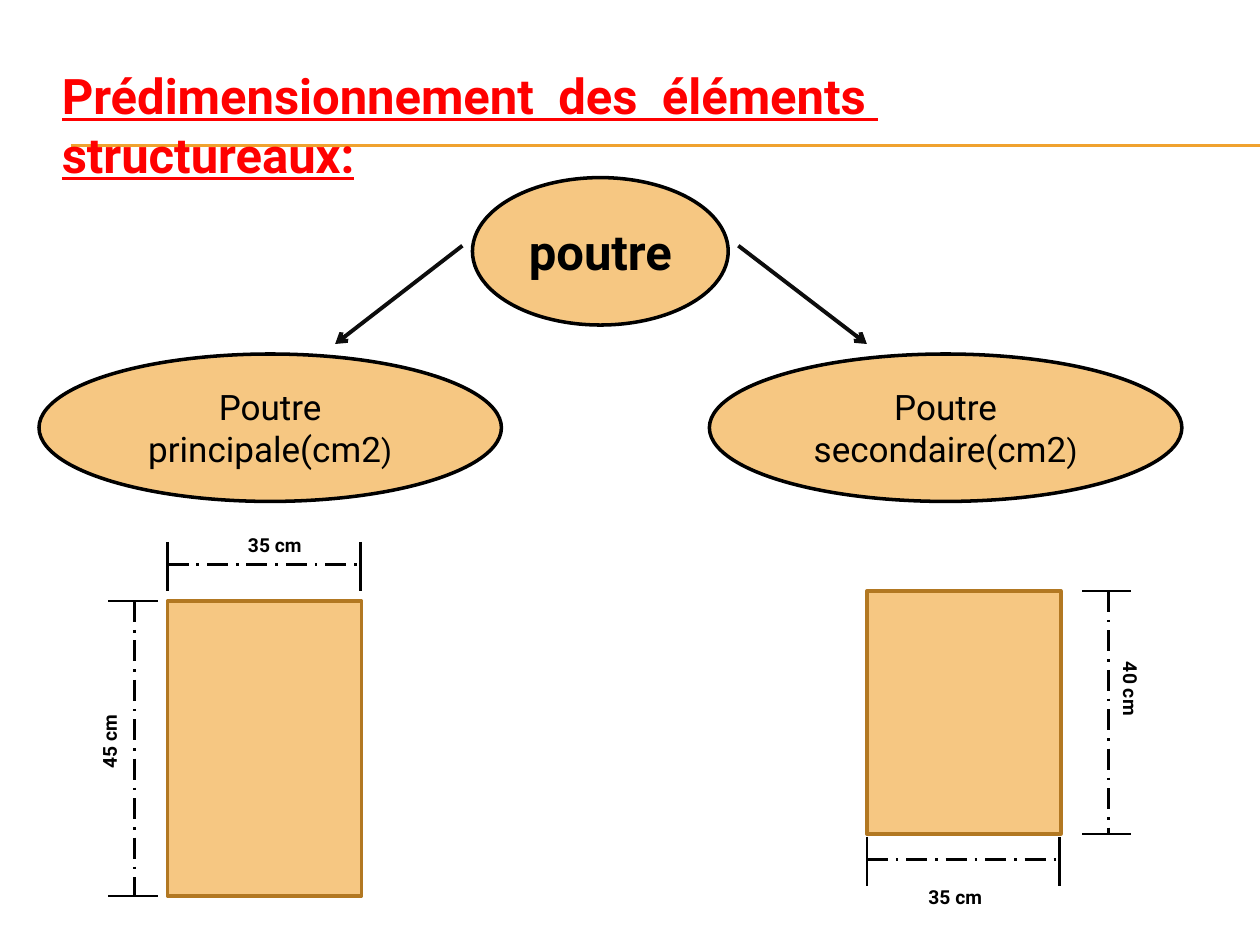
from dataclasses import dataclass

import pptx
import pptx.dml.color
import pptx.enum.dml
import pptx.enum.shapes
import pptx.enum.text
import pptx.oxml
import pptx.oxml.ns
import pptx.util
from pptx.util import Inches

COLORS = {
    "title": "FF0000",
    "rule": "F0A22E",
    "fill": "F6C782",
    "section_border": "B27822",
    "arrow": "0D0D0D",
    "ink": "000000",
}
FONT = "Roboto"
SHAPES = pptx.enum.shapes.MSO_SHAPE
ANCHORS = pptx.enum.text.MSO_ANCHOR
DASH = pptx.enum.dml.MSO_LINE.LONG_DASH_DOT
BOTTOM_TO_TOP, TOP_TO_BOTTOM = 270, 90


@dataclass(frozen=True)
class Box:
    left: float
    top: float
    width: float
    height: float

    def lengths(self) -> list:
        return [Inches(v) for v in (self.left, self.top, self.width, self.height)]


@dataclass(frozen=True)
class Beam:
    box: Box
    runs: tuple[tuple[str, int], ...]
    bold: bool = False


@dataclass(frozen=True)
class Dimension:
    """A dash-dot line at `level`, closed by ticks from `tick_start` to `tick_end`."""
    start: float
    end: float
    level: float
    tick_start: float
    tick_end: float
    vertical: bool = False


@dataclass(frozen=True)
class Label:
    text: str
    left: float
    top: float
    rotation: int = 0


BEAMS = [
    Beam(Box(3.75, 1.41, 2.03, 1.17), (("poutre", 28),), bold=True),
    Beam(Box(0.31, 2.81, 3.67, 1.17), (("Poutre principale(cm2", 20), (")", 18))),
    Beam(Box(5.63, 2.81, 3.75, 1.17), (("Poutre secondaire(cm2", 20), (")", 18))),
]
ARROWS = [((3.67, 1.95), (2.66, 2.73)), ((5.86, 1.95), (6.88, 2.73))]
MAIN_SECTION = Box(1.33, 4.77, 1.54, 2.34)
SECONDARY_SECTION = Box(6.88, 4.69, 1.54, 1.93)
DIMENSIONS = [
    Dimension(1.33, 2.86, 4.48, 4.3, 4.69),
    Dimension(4.77, 7.11, 1.07, 0.86, 1.25, vertical=True),
    Dimension(4.69, 6.62, 8.8, 8.59, 8.98, vertical=True),
    Dimension(6.88, 8.41, 6.82, 6.64, 7.03),
]
LABELS = [
    Label("35 cm", 1.87, 4.18),
    Label("35 cm", 7.27, 6.98),
    Label("45 cm", 0.52, 5.7, BOTTOM_TO_TOP),
    Label("40 cm", 8.62, 5.36, TOP_TO_BOTTOM),
]


def rgb(name: str) -> pptx.dml.color.RGBColor:
    return pptx.dml.color.RGBColor.from_string(COLORS[name])


def style_font(font, size: int, color: str, bold: bool) -> None:
    font.name = FONT
    font.size = pptx.util.Pt(size)
    font.bold = bold
    font.color.rgb = rgb(color)


def add_line(slide, start, end, color: str = "ink", width: float = 1.5, dash=None):
    line = slide.shapes.add_connector(
        pptx.enum.shapes.MSO_CONNECTOR.STRAIGHT,
        *(Inches(v) for v in (*start, *end)),
    )
    line.line.color.rgb = rgb(color)
    line.line.width = pptx.util.Pt(width)
    if dash is not None:
        line.line.dash_style = dash
    pptx.oxml.ns.qn("a:effectLst")
    line.element.spPr.append(pptx.oxml.parse_xml(
        f'<a:effectLst {pptx.oxml.ns.nsdecls("a")}/>'))
    return line


def add_arrow(slide, start, end) -> None:
    arrow = add_line(slide, start, end, "arrow", 2.25)
    arrow.line._get_or_add_ln().append(pptx.oxml.parse_xml(
        f'<a:tailEnd {pptx.oxml.ns.nsdecls("a")} type="arrow"/>'))


def add_filled_shape(slide, kind, box: Box, border: str):
    shape = slide.shapes.add_shape(kind, *box.lengths())
    shape.shadow.inherit = False
    shape.fill.solid()
    shape.fill.fore_color.rgb = rgb("fill")
    shape.line.color.rgb = rgb(border)
    shape.line.width = pptx.util.Pt(2)
    return shape


def add_beam(slide, beam: Beam) -> None:
    frame = add_filled_shape(slide, SHAPES.OVAL, beam.box, "ink").text_frame
    frame.word_wrap = True
    frame.vertical_anchor = ANCHORS.MIDDLE
    paragraph = frame.paragraphs[0]
    paragraph.alignment = pptx.enum.text.PP_ALIGN.CENTER
    for text, size in beam.runs:
        run = paragraph.add_run()
        run.text = text
        style_font(run.font, size, "ink", beam.bold)


def add_dimension(slide, dim: Dimension) -> None:
    def point(along: float, across: float) -> tuple[float, float]:
        return (across, along) if dim.vertical else (along, across)

    add_line(slide, point(dim.start, dim.level), point(dim.end, dim.level), dash=DASH)
    for along in (dim.start, dim.end):
        add_line(slide, point(along, dim.tick_start), point(along, dim.tick_end))


def add_label(slide, label: Label) -> None:
    text_box = slide.shapes.add_textbox(*Box(label.left, label.top, 0.7, 0.29).lengths())
    text_box.rotation = label.rotation
    text_box.text_frame.word_wrap = True
    paragraph = text_box.text_frame.paragraphs[0]
    paragraph.text = label.text
    style_font(paragraph.font, 11, "ink", bold=True)


def add_title(slide) -> None:
    title = slide.shapes.title
    title.left, title.top, title.width, title.height = Box(0.39, 0.47, 8.91, 0.57).lengths()
    frame = title.text_frame
    frame.word_wrap = True
    frame.auto_size = pptx.enum.text.MSO_AUTO_SIZE.NONE
    frame.vertical_anchor = ANCHORS.TOP
    paragraph = frame.paragraphs[0]
    paragraph.text = "Prédimensionnement  des  éléments  structureaux:"
    paragraph.alignment = pptx.enum.text.PP_ALIGN.LEFT
    style_font(paragraph.font, 28, "title", bold=True)
    paragraph.font.underline = True
    for level in (1.15, 1.16):
        rule = add_line(slide, (0.56, level), (10, level), "rule", 0.75)
        title.element.addprevious(rule.element)  # rules lie behind the title


def main() -> None:
    deck = pptx.Presentation()
    deck.slide_width, deck.slide_height = Inches(10), Inches(7.5)
    slide = deck.slides.add_slide(deck.slide_layouts.get_by_name("Title Only"))

    add_title(slide)
    for beam in BEAMS:
        add_beam(slide, beam)
    for start, end in ARROWS:
        add_arrow(slide, start, end)
    for section in (MAIN_SECTION, SECONDARY_SECTION):
        add_filled_shape(slide, SHAPES.RECTANGLE, section, "section_border")
    for dimension in DIMENSIONS:
        add_dimension(slide, dimension)
    for label in LABELS:
        add_label(slide, label)

    deck.save("out.pptx")


if __name__ == "__main__":
    main()
